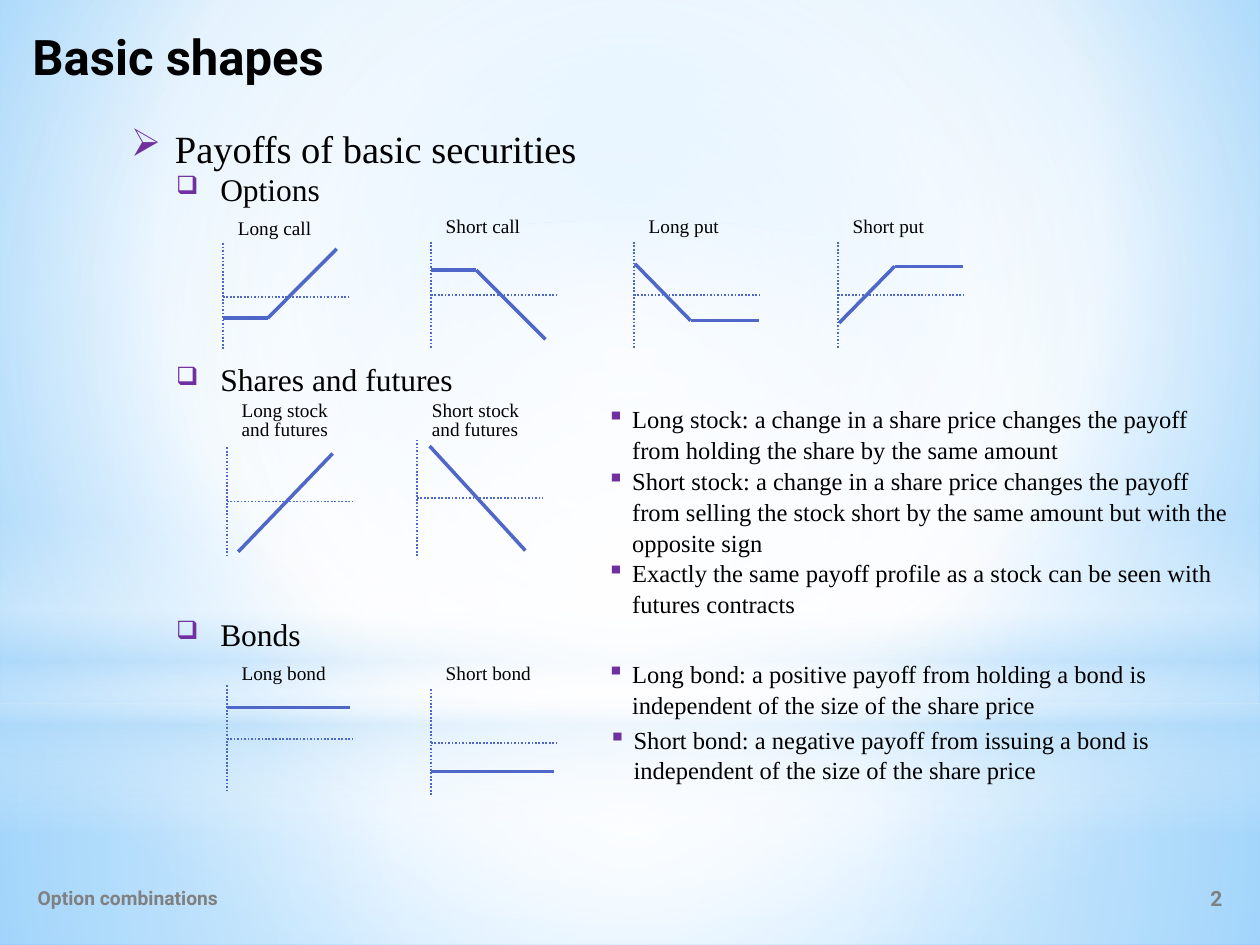
from dataclasses import dataclass
from itertools import pairwise

from lxml.etree import SubElement
from pptx import Presentation
from pptx.dml.color import RGBColor
from pptx.enum.dml import MSO_LINE
from pptx.enum.shapes import MSO_CONNECTOR, MSO_SHAPE
from pptx.enum.text import MSO_ANCHOR, MSO_AUTO_SIZE, PP_ALIGN
from pptx.oxml import parse_xml
from pptx.oxml.ns import nsdecls, qn
from pptx.util import Pt

SERIF, SANS = "Times New Roman", "Roboto"
BLACK, GREY, BLUE, PURPLE = "000000", "808080", "4E67C8", "7030A0"
WHITE, SKY = "FFFFFF", "B4DCFA"
CENTRE = (50, 50, 50, 50)


@dataclass(frozen=True)
class Backdrop:
    preset: MSO_SHAPE
    top: float
    height: float
    stops: tuple
    focus: tuple | None = CENTRE


@dataclass(frozen=True)
class Style:
    size: float
    font: str = SERIF
    color: str = BLACK
    bold: bool = False
    bullet: str = ""
    indent: float = 0
    bullet_size: int = 100
    spacing: float = 1.0


@dataclass(frozen=True)
class Words:
    text: str
    box: tuple
    style: Style


@dataclass(frozen=True)
class Payoff:
    label: str
    label_top: float
    axis: float
    top: float
    height: float
    profile: tuple
    label_height: float = 18


TITLE = Style(28, SANS, bold=True)
TOPIC = Style(22, bullet="➢", indent=25.2)
SECTION = Style(18, bullet="❑", indent=25.2, bullet_size=80)
DETAIL = Style(14, bullet="▪", indent=14.4, spacing=1.05)
LABEL = Style(11, spacing=0.8)

BACKDROPS = (
    Backdrop(MSO_SHAPE.RECTANGLE, 401.8, 138.2, ((0, WHITE, 91), (37, WHITE, 76), (100, SKY, 79))),
    Backdrop(MSO_SHAPE.RECTANGLE, 0, 401.8, ((0, WHITE, 89), (48, WHITE, 62), (100, SKY, 79))),
    Backdrop(MSO_SHAPE.RECTANGLE, 296.6, 180,
             ((0, WHITE, 0), (29, WHITE, 30), (45, SKY, 40),
              (55, WHITE, 26), (65, SKY, 60), (100, WHITE, 0)), None),
    Backdrop(MSO_SHAPE.OVAL, 126, 401.8, ((0, WHITE, 100), (56, WHITE, 0))),
)

HEADINGS = (
    Words("Basic shapes", (11.5, 11.5, 201.6, 51.1), TITLE),
    Words("Payoffs of basic securities", (67.7, 67.7, 303.1, 33.8), TOPIC),
    Words("Options", (93.6, 93.6, 113, 28.8), SECTION),
    Words("Shares and futures", (93.6, 202.3, 205.2, 28.8), SECTION),
    Words("Bonds", (93.6, 347.8, 100.8, 28.8), SECTION),
)

DETAILS = (
    Words("Long stock: a change in a share price changes the payoff from holding "
          "the share by the same amount", (339.8, 226.8, 371.5, 41), DETAIL),
    Words("Short stock: a change in a share price changes the payoff from selling the "
          "stock short by the same amount but with the opposite sign",
          (339.8, 262.1, 371.5, 58.3), DETAIL),
    Words("Exactly the same payoff profile as a stock can be seen with futures contracts",
          (339.8, 314.6, 371.5, 41), DETAIL),
    Words("Long bond: a positive payoff from holding a bond is independent of the size "
          "of the share price", (339.8, 372.2, 371.5, 41), DETAIL),
    Words("Short bond: a negative payoff from issuing a bond is independent of the size "
          "of the share price", (340.6, 409.7, 371.5, 41), DETAIL),
)

PAYOFFS = (
    Payoff("Long call", 122.4, 127.4, 139, 61.2, ((0, 12.2), (25.6, 12.2), (65, -27.4))),
    Payoff("Short call", 121.7, 246.2, 138.2, 61.2, ((0, -14.4), (26, -14.4), (65.5, 25.2))),
    Payoff("Long put", 121.7, 362.2, 138.2, 61.2, ((0.7, -18), (32.4, 14.4), (71.3, 14.4))),
    Payoff("Short put", 121.7, 478.8, 138.2, 61.2, ((0.7, 15.8), (32.4, -16.6), (71.3, -16.6))),
    Payoff("Long stock and futures", 226.8, 129.6, 255.6, 61.9,
           ((6.5, 28.8), (60.5, -27.4)), 28.8),
    Payoff("Short stock and futures", 226.8, 238.3, 251.3, 66.2,
           ((7.2, -29.5), (61.9, 30.2)), 28.8),
    Payoff("Long bond", 376.6, 129.6, 391.7, 61.2, ((0, -18), (70.6, -18))),
    Payoff("Short bond", 376.6, 246.2, 393.8, 61.2, ((0, 16.6), (70.6, 16.6))),
)


def rgb(color: str) -> RGBColor:
    return RGBColor.from_string(color)


def gradient(stops: tuple, focus: tuple | None):
    colors = "".join(
        f'<a:gs pos="{position * 1000}"><a:srgbClr val="{color}">'
        f'<a:alpha val="{opacity * 1000}"/></a:srgbClr></a:gs>'
        for position, color, opacity in stops)
    direction = '<a:lin ang="5400000" scaled="0"/>'
    if focus:
        sides = " ".join(f'{side}="{inset * 1000}"' for side, inset in zip("ltrb", focus))
        direction = f'<a:path path="circle"><a:fillToRect {sides}/></a:path>'
    return parse_xml(f'<a:gradFill {nsdecls("a")} rotWithShape="1">'
                     f'<a:gsLst>{colors}</a:gsLst>{direction}</a:gradFill>')


def replace_fill(properties, stops: tuple, focus: tuple | None) -> None:
    properties.replace(properties.find(qn("a:solidFill")), gradient(stops, focus))


def draw_backdrop(shapes, backdrop: Backdrop) -> None:
    panel = shapes.add_shape(backdrop.preset, 0, Pt(backdrop.top), Pt(720), Pt(backdrop.height))
    panel.shadow.inherit = False
    panel.line.fill.background()
    panel.fill.solid()
    replace_fill(panel.element.spPr, backdrop.stops, backdrop.focus)


def write(shapes, words: Words, anchor=MSO_ANCHOR.TOP, align=PP_ALIGN.LEFT) -> None:
    style = words.style
    frame = shapes.add_textbox(*map(Pt, words.box)).text_frame
    frame.word_wrap = True
    frame.auto_size = MSO_AUTO_SIZE.NONE
    frame.vertical_anchor = anchor
    frame.text = words.text
    paragraph = frame.paragraphs[0]
    paragraph.alignment = align
    paragraph.line_spacing = style.spacing
    font = paragraph.runs[0].font
    font.name, font.size, font.bold = style.font, Pt(style.size), style.bold
    font.color.rgb = rgb(style.color)
    if style.bullet:
        properties = paragraph._p.get_or_add_pPr()
        properties.set("marL", str(Pt(style.indent)))
        properties.set("indent", str(-Pt(style.indent)))
        tint = SubElement(properties, qn("a:buClr"))
        SubElement(tint, qn("a:srgbClr"), val=PURPLE)
        SubElement(properties, qn("a:buSzPct"), val=str(style.bullet_size * 1000))
        SubElement(properties, qn("a:buChar"), char=style.bullet)


def draw_line(shapes, start: tuple, end: tuple, width: float, dotted: bool = False) -> None:
    line = shapes.add_connector(MSO_CONNECTOR.STRAIGHT, *map(Pt, start + end))
    line.line.color.rgb = rgb(BLUE)
    line.line.width = Pt(width)
    if dotted:
        line.line.dash_style = MSO_LINE.ROUND_DOT
    SubElement(line.element.spPr, qn("a:effectLst"))


def draw_payoff(shapes, payoff: Payoff) -> None:
    group = shapes.add_group_shape().shapes
    axis, zero = payoff.axis, payoff.top + payoff.height / 2
    draw_line(group, (axis, payoff.top), (axis, payoff.top + payoff.height), 1, True)
    draw_line(group, (axis, zero), (axis + 71.5, zero), 1, True)
    write(group, Words(payoff.label, (axis + 1.4, payoff.label_top, 69, payoff.label_height), LABEL))
    for start, end in pairwise((axis + x, zero + y) for x, y in payoff.profile):
        draw_line(group, start, end, 2)


def main() -> None:
    deck = Presentation()
    deck.slide_width, deck.slide_height = Pt(720), Pt(540)
    slide = deck.slides.add_slide(deck.slide_layouts[6])
    slide.background.fill.solid()
    replace_fill(slide.element.find(".//" + qn("p:bgPr")),
                 ((0, "9ED5FF", 100), (60, WHITE, 100), (100, "5BB9FF", 100)), (20, 10, 20, 60))
    for backdrop in BACKDROPS:
        draw_backdrop(slide.shapes, backdrop)
    write(slide.shapes, Words("Option combinations", (14.4, 499, 260.6, 28.1),
                              Style(11, SANS, GREY, True)), MSO_ANCHOR.MIDDLE)
    write(slide.shapes, Words("2", (563.8, 499, 141.8, 28.1),
                              Style(12, SANS, GREY, True)), MSO_ANCHOR.MIDDLE, PP_ALIGN.RIGHT)
    for words in HEADINGS + DETAILS:
        write(slide.shapes, words)
    for payoff in PAYOFFS:
        draw_payoff(slide.shapes, payoff)
    deck.save("out.pptx")


if __name__ == "__main__":
    main()
